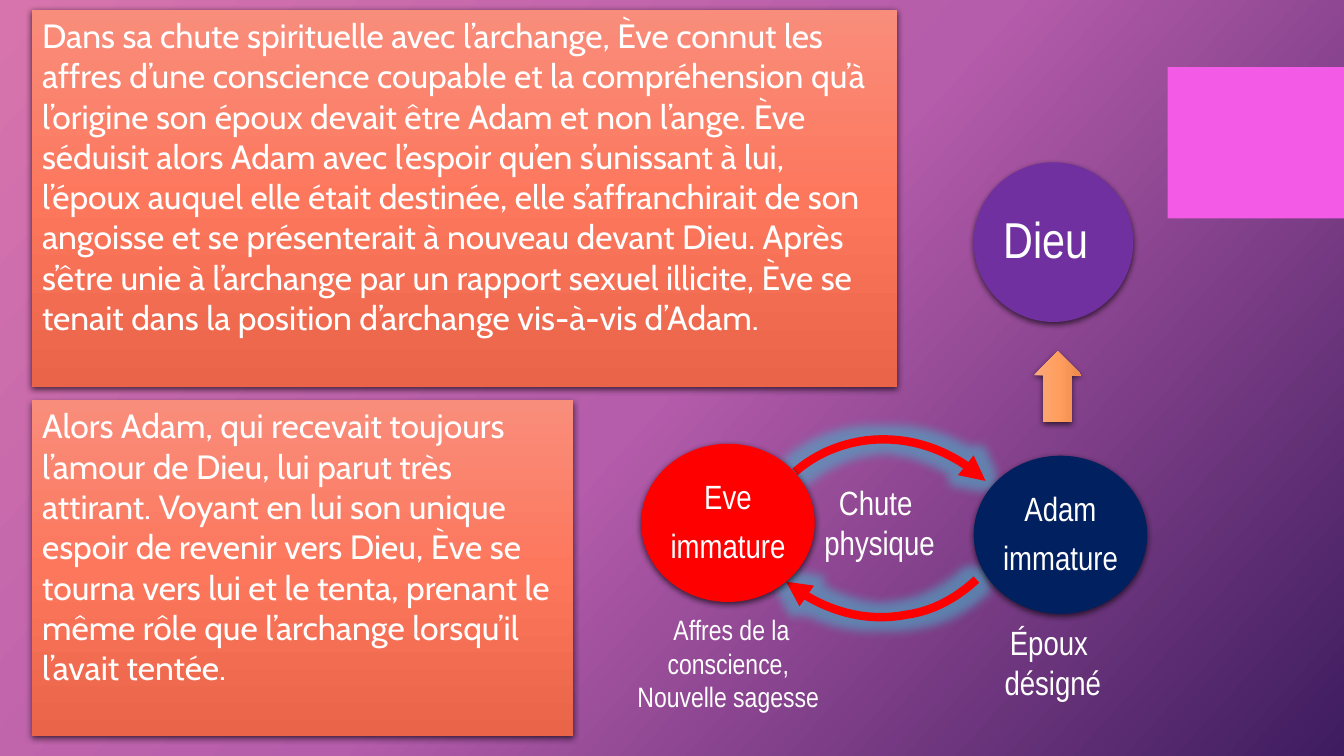
import pptx
import pptx.util
import pptx.dml.color
import pptx.enum.shapes
import pptx.enum.text
import pptx.oxml
from pptx.oxml.ns import nsdecls, qn

Pt = pptx.util.Pt
Preset = pptx.enum.shapes.MSO_SHAPE
Align = pptx.enum.text.PP_ALIGN
Anchor = pptx.enum.text.MSO_ANCHOR

COLOURS = {
    "white": "FFFFFF", "black": "000000", "magenta": "F35AE6",
    "god": "7030A0", "eve": "FF0000", "adam": "002060",
    "arc": "FF0000", "glow": "4BACC6",
}
BACKDROP = ("D774AD", "B55CAB", "3E1C5F")
CORAL = ("F98D7B", "FD775D", "EA644A")
ORANGE = ("FBAB7C", "FF9E5E", "EB8A4B")


def curve_points(start, *beziers, steps=16):
    """Points along a chain of cubic curves."""
    points = [start]
    for control_a, control_b, end in beziers:
        begin = points[-1]
        for step in range(1, steps + 1):
            t = step / steps
            weights = ((1 - t) ** 3, 3 * t * (1 - t) ** 2, 3 * t * t * (1 - t), t ** 3)
            knots = (begin, control_a, control_b, end)
            points.append(tuple(sum(w * knot[axis] for w, knot in zip(weights, knots))
                                for axis in (0, 1)))
    return points


class SlideBuilder:
    narrow = "Arial Narrow"
    body = "Cabin"

    def __init__(self, page):
        self.page = page

    def colour(self, name):
        return pptx.dml.color.RGBColor.from_string(COLOURS[name])

    def gradient(self, fill, element, stops, angle):
        fill.gradient()
        fill.gradient_angle = -angle % 360
        stop_list = next(element.iter(qn("a:gsLst")))
        for stop in list(stop_list):
            stop_list.remove(stop)
        for index, value in enumerate(stops):
            stop_list.append(pptx.oxml.parse_xml(
                f'<a:gs {nsdecls("a")} pos="{index * 50000}"><a:srgbClr val="{value}"/></a:gs>'))

    def background(self, stops, angle):
        self.gradient(self.page.background.fill, self.page.element, stops, angle)

    def effect(self, shape, tag, attributes, colour, alpha):
        shape.shadow.inherit = False
        shape.element.spPr.find(qn("a:effectLst")).append(pptx.oxml.parse_xml(
            f'<a:{tag} {nsdecls("a")} {attributes}><a:srgbClr val="{COLOURS[colour]}">'
            f'<a:alpha val="{alpha * 1000}"/></a:srgbClr></a:{tag}>'))

    def shape(self, preset, place, fill, angle=90, shadow=True):
        shape = self.page.shapes.add_shape(preset, *map(Pt, place))
        if isinstance(fill, tuple):
            self.gradient(shape.fill, shape.element, fill, angle)
        else:
            shape.fill.solid()
            shape.fill.fore_color.rgb = self.colour(fill)
        shape.line.fill.background()
        shape.shadow.inherit = False
        if shadow:
            self.effect(shape, "outerShdw",
                        f'blurRad="{Pt(4.5)}" dist="{Pt(1.5)}" dir="5400000" rotWithShape="0"',
                        "black", 63)
        return shape

    def set_text(self, shape, lines, size, font, align, wrap=True):
        frame = shape.text_frame
        frame.word_wrap = wrap
        for index, line in enumerate(lines):
            para = frame.add_paragraph() if index else frame.paragraphs[0]
            para.text = line
            para.alignment = align
            para.font.size = Pt(size)
            para.font.name = font
            para.font.color.rgb = self.colour("white")
        return frame

    def caption(self, place, lines, size, wrap=False):
        box = self.page.shapes.add_textbox(*map(Pt, place))
        self.set_text(box, lines, size, self.narrow, Align.CENTER, wrap)

    def panel(self, place, text):
        shape = self.shape(Preset.RECTANGLE, place, CORAL)
        frame = self.set_text(shape, [text], 24, self.body, Align.LEFT)
        frame.vertical_anchor = Anchor.TOP

    def disc(self, place, fill, lines, size, right_inset=3):
        shape = self.shape(Preset.OVAL, place, fill)
        frame = self.set_text(shape, lines, size, self.narrow, Align.CENTER, wrap=False)
        frame.vertical_anchor = Anchor.MIDDLE
        frame.margin_left = frame.margin_top = frame.margin_bottom = Pt(3)
        frame.margin_right = Pt(right_inset)
        for para in frame.paragraphs:
            para.line_spacing = 0.9
            para.space_after = Pt(9)

    def arc_arrow(self, start, *beziers):
        points = [(Pt(x), Pt(y)) for x, y in curve_points(start, *beziers)]
        builder = self.page.shapes.build_freeform(*points[0])
        builder.add_line_segments(points[1:], close=False)
        arc = builder.convert_to_shape()
        arc.fill.background()
        arc.line.color.rgb = self.colour("arc")
        arc.line.width = Pt(6)
        arc.element.spPr.find(qn("a:ln")).append(
            pptx.oxml.parse_xml(f'<a:tailEnd {nsdecls("a")} type="triangle"/>'))
        self.effect(arc, "glow", f'rad="{Pt(14)}"', "glow", 60)


def main():
    deck = pptx.Presentation()
    deck.slide_width, deck.slide_height = Pt(960), Pt(540)
    page = deck.slides.add_slide(deck.slide_layouts[6])
    builder = SlideBuilder(page)

    # Backdrop
    builder.background(BACKDROP, 42)
    builder.shape(Preset.RECTANGLE, (834, 48, 126, 108), "magenta", shadow=False)

    # Give-and-take arcs between Eve and Adam
    builder.arc_arrow((697.5, 414), ((683, 427.5), (666, 436.5), (648, 439)),
                      ((618.5, 445), (587.5, 436.5), (561.5, 415.5)))
    builder.arc_arrow((568, 337), ((583, 324), (600.5, 317), (619, 314.5)),
                      ((649.5, 311), (679.5, 321), (704, 343.5)))

    # Captions
    builder.caption((581, 340.5, 94.5, 65.5), ["Chute ", "physique"], 24)
    builder.caption((440.5, 434, 164, 80),
                    ["Affres de la conscience, ", "Nouvelle sagesse "], 20, wrap=True)
    builder.caption((710, 440.5, 84, 65.5), ["Époux ", "désigné"], 24)

    # Persons and the arrow up to God
    builder.disc((695.5, 116, 114, 114), "god", ["Dieu"], 36, right_inset=13)
    arrow = builder.shape(Preset.UP_ARROW, (738.5, 251, 34, 50.5), ORANGE, angle=0)
    arrow.adjustments[0], arrow.adjustments[1] = 0.6, 0.5
    builder.disc((458, 317, 124, 113), "eve", ["Eve", "immature"], 24)
    builder.disc((695.5, 325.5, 124, 113), "adam", ["Adam", "immature"], 24)

    # Text panels
    builder.panel((23, 7, 618, 269.5),
                  "Dans sa chute spirituelle avec l’archange, Ève connut les affres d’une "
                  "conscience coupable et la compréhension qu’à l’origine son époux devait être "
                  "Adam et non l’ange. Ève séduisit alors Adam avec l’espoir qu’en s’unissant à "
                  "lui, l’époux auquel elle était destinée, elle s’affranchirait de son angoisse "
                  "et se présenterait à nouveau devant Dieu. Après s’être unie à l’archange par "
                  "un rapport sexuel illicite, Ève se tenait dans la position d’archange "
                  "vis-à-vis d’Adam.")
    builder.panel((23, 286, 386.5, 240),
                  "Alors Adam, qui recevait toujours l’amour de Dieu, lui parut très attirant. "
                  "Voyant en lui son unique espoir de revenir vers Dieu, Ève se tourna vers lui "
                  "et le tenta, prenant le même rôle que l’archange lorsqu’il l’avait tentée.")

    deck.save("out.pptx")


if __name__ == "__main__":
    main()
